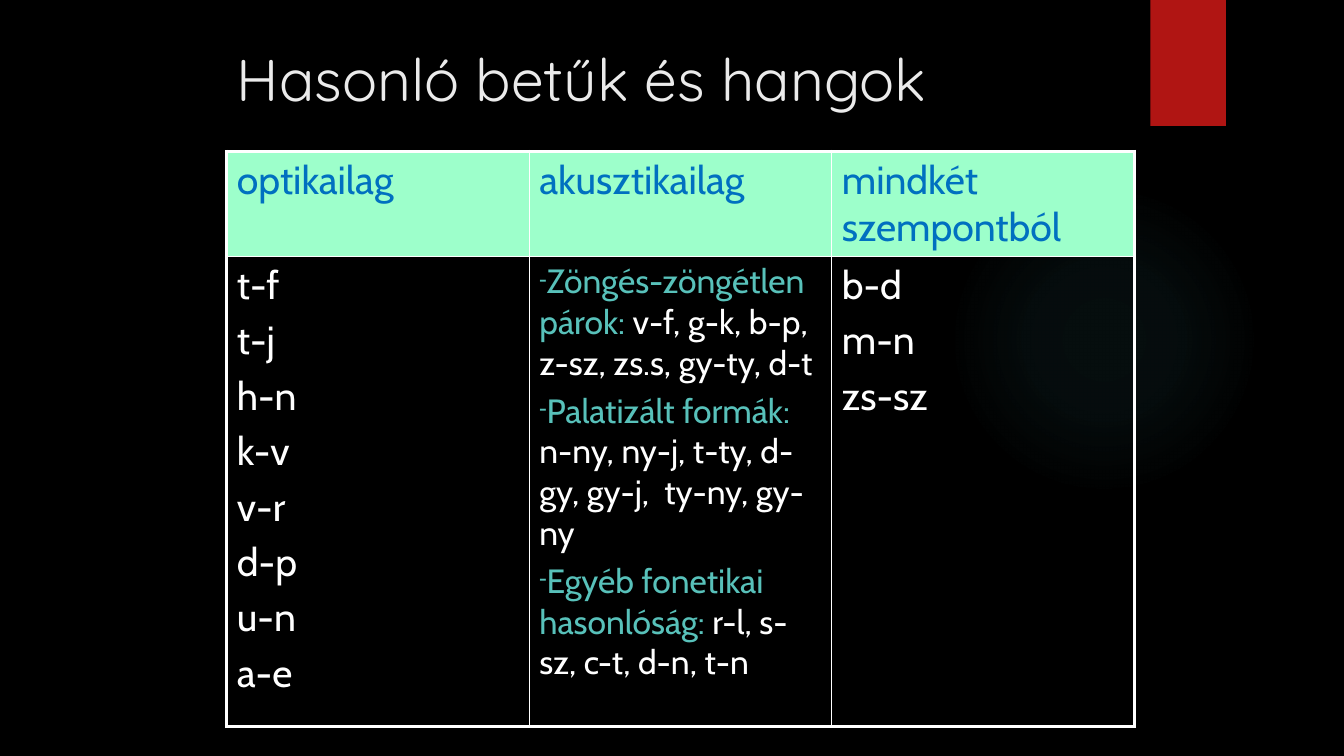
"""Build a slide with a table of similar letters and sounds."""
import pptx
import pptx.dml.color
import pptx.enum.shapes
import pptx.enum.text
import pptx.oxml
import pptx.oxml.ns
import pptx.util
from pptx.util import Inches

COLOURS = {"background": "000000", "title": "EBEBEB", "accent": "B01513",
           "glow": "50B9C1", "header": "9DFFCB", "heading": "0070C0",
           "term": "58C1BA", "text": "FFFFFF"}
TITLE = "Hasonló betűk és hangok"
HEADINGS = ["optikailag", "akusztikailag", "mindkét szempontból"]
OPTICAL = ["t-f", "t-j", "h-n", "k-v", "v-r", "d-p", "u-n", "a-e"]
ACOUSTIC = [
    ("Zöngés-zöngétlen párok:", " v-f, g-k, b-p, z-sz, zs.s, gy-ty, d-t"),
    ("Palatizált formák:", " n-ny, ny-j, t-ty, d-gy, gy-j,  ty-ny, gy-ny"),
    ("Egyéb fonetikai hasonlóság:", " r-l, s-sz, c-t, d-n, t-n"),
]
BOTH = ["b-d", "m-n", "zs-sz"]
GLOW_STOPS = [(0, 7), (36, 6), (69, 0), (100, 0)]
ROW_HEIGHTS = [1.03, 4.66]
COLUMN_WIDTH = 3
LEFT = 2.25


def rgb(name):
    return pptx.dml.color.RGBColor.from_string(COLOURS[name])


def xml(tag, attributes="", inner=""):
    namespace = pptx.oxml.ns.nsdecls("a")
    return pptx.oxml.parse_xml(f"<a:{tag} {namespace} {attributes}>{inner}</a:{tag}>")


def colour_xml(name, inner=""):
    return f'<a:srgbClr val="{COLOURS[name]}">{inner}</a:srgbClr>'


def format_run(run, font, size, colour):
    run.font.name = font
    run.font.size = pptx.util.Pt(size)
    run.font.bold = False
    run.font.color.rgb = rgb(colour)


def add_plain(paragraph, text, colour):
    paragraph.text = text
    format_run(paragraph.runs[0], "Cabin", 28, colour)


def add_term(paragraph, term, examples):
    properties = paragraph._p.get_or_add_pPr()
    properties.set("marL", "0")
    properties.set("indent", "0")
    properties.append(xml("buClr", inner=colour_xml("term")))
    properties.append(xml("buSzPct", 'val="65000"'))
    properties.append(xml("buChar", 'char="-"'))
    for text, colour in ((term, "term"), (examples, "text")):
        run = paragraph.add_run()
        run.text = text
        format_run(run, "Cabin", 24, colour)


def fill_cell(cell, entries, colour):
    frame = cell.text_frame
    for index, entry in enumerate(entries):
        paragraph = frame.add_paragraph() if index else frame.paragraphs[0]
        if isinstance(entry, tuple):
            add_term(paragraph, *entry)
        else:
            add_plain(paragraph, entry, colour)
        if index:
            paragraph.space_before = pptx.util.Pt(0.2 * paragraph.runs[0].font.size.pt)


def add_borders(cell, outer_sides):
    properties = cell._tc.get_or_add_tcPr()
    for side in "LRTB":
        width = pptx.util.Pt(2.25 if side in outer_sides else 1)
        line = f"<a:solidFill>{colour_xml('text')}</a:solidFill>"
        properties.append(xml(f"ln{side}", f'w="{width}"', line))


def add_block(slide, kind, left, top, width, height, colour):
    block = slide.shapes.add_shape(kind, Inches(left), Inches(top), Inches(width), Inches(height))
    block.shadow.inherit = False
    block.line.fill.background()
    block.fill.solid()
    block.fill.fore_color.rgb = rgb(colour)
    return block


def add_glow(slide):
    glow = add_block(slide, pptx.enum.shapes.MSO_SHAPE.OVAL, 9.41, 1.83, 3.08, 3.08, "glow")
    stops = "".join(
        f'<a:gs pos="{position * 1000}">'
        + colour_xml("glow", f'<a:alpha val="{opacity * 1000}"/>') + "</a:gs>"
        for position, opacity in GLOW_STOPS)
    gradient = xml("gradFill", 'rotWithShape="1"',
                   f'<a:gsLst>{stops}</a:gsLst><a:path path="circle">'
                   '<a:fillToRect l="50000" t="50000" r="50000" b="50000"/></a:path>')
    properties = glow._element.spPr
    properties.replace(properties.find(pptx.oxml.ns.qn("a:solidFill")), gradient)


def add_title(slide):
    title = slide.shapes.title
    title.left, title.top = Inches(LEFT), Inches(0.31)
    title.width, title.height = Inches(9), Inches(0.93)
    frame = title.text_frame
    frame.text = TITLE
    frame.vertical_anchor = pptx.enum.text.MSO_ANCHOR.MIDDLE
    frame.paragraphs[0].alignment = pptx.enum.text.PP_ALIGN.LEFT
    format_run(frame.paragraphs[0].runs[0], "Quicksand", 42, "title")


def add_letters(slide):
    rows = [[[heading] for heading in HEADINGS], [OPTICAL, ACOUSTIC, BOTH]]
    columns = len(HEADINGS)
    letters = slide.shapes.add_table(
        len(rows), columns, Inches(LEFT), Inches(1.5),
        Inches(COLUMN_WIDTH * columns), Inches(sum(ROW_HEIGHTS))).table
    letters.first_row = letters.horz_banding = False
    for column in letters.columns:
        column.width = Inches(COLUMN_WIDTH)
    for r, (height, row) in enumerate(zip(ROW_HEIGHTS, rows)):
        letters.rows[r].height = Inches(height)
        for c, entries in enumerate(row):
            cell = letters.cell(r, c)
            fill_cell(cell, entries, "text" if r else "heading")
            add_borders(cell, ("B" if r else "T") + {0: "L", columns - 1: "R"}.get(c, ""))
            if r:
                cell.fill.background()
            else:
                cell.fill.solid()
                cell.fill.fore_color.rgb = rgb("header")


def main():
    presentation = pptx.Presentation()
    presentation.slide_width, presentation.slide_height = Inches(13.33), Inches(7.5)
    slide = presentation.slides.add_slide(presentation.slide_layouts[5])
    slide.background.fill.solid()
    slide.background.fill.fore_color.rgb = rgb("background")
    add_glow(slide)
    add_block(slide, pptx.enum.shapes.MSO_SHAPE.RECTANGLE, 11.41, 0, 0.75, 1.25, "accent")
    add_title(slide)
    add_letters(slide)
    presentation.save("out.pptx")


if __name__ == "__main__":
    main()
